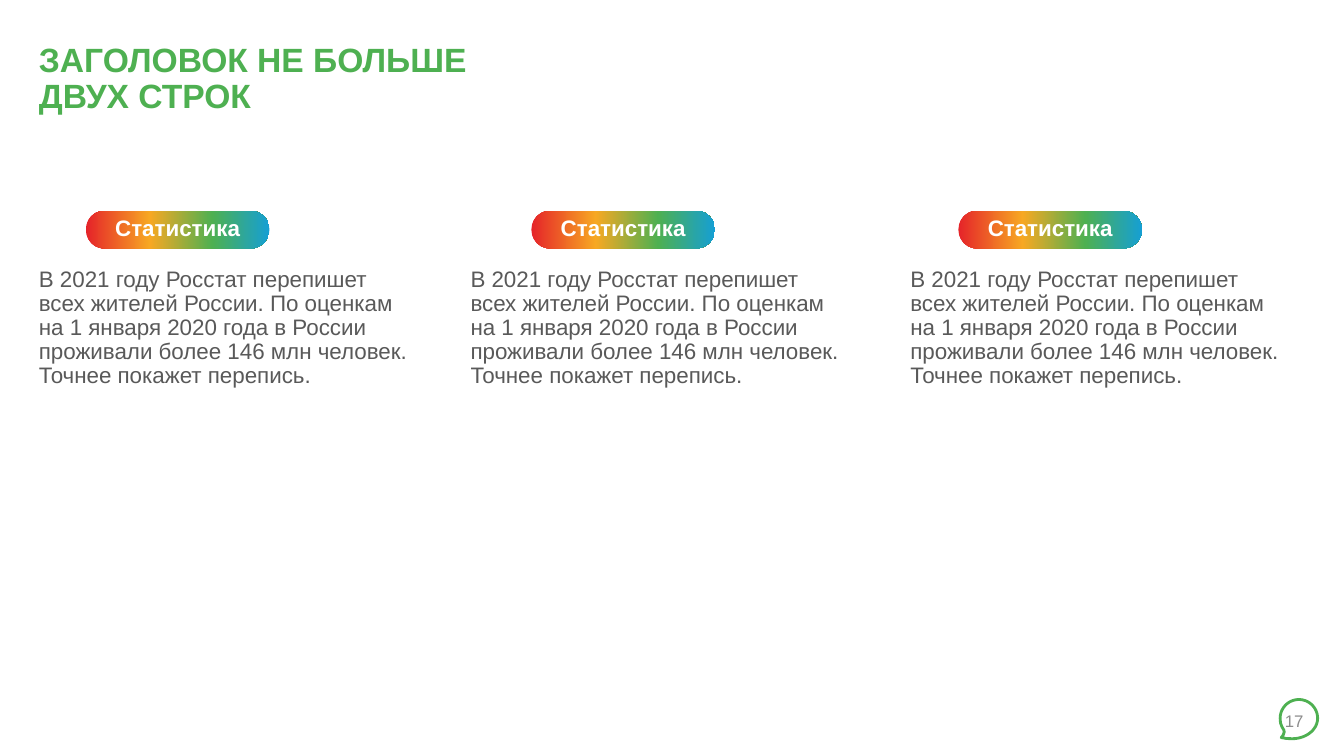
from copy import deepcopy
from dataclasses import dataclass
from math import cos, radians, sin

from pptx import Presentation
from pptx.dml.color import RGBColor
from pptx.enum.shapes import MSO_SHAPE
from pptx.enum.text import MSO_ANCHOR, PP_ALIGN
from pptx.util import Pt

PILL = MSO_SHAPE.ROUNDED_RECTANGLE
TOP, MIDDLE = MSO_ANCHOR.TOP, MSO_ANCHOR.MIDDLE
LEFT, CENTER, RIGHT = PP_ALIGN.LEFT, PP_ALIGN.CENTER, PP_ALIGN.RIGHT


@dataclass(frozen=True)
class Theme:
    font: str = "Arial"
    green: str = "4EB051"
    body: str = "595959"
    number: str = "8C8C8C"
    white: str = "FFFFFF"
    rainbow: tuple = ((0, "E52329"), (0.35, "F7A823"), (0.69, "4EB051"), (1, "159FD4"))
    title_size: int = 24
    body_size: int = 16
    number_size: int = 12
    line_spacing: float = 0.9


THEME = Theme()

TITLE = ("ЗАГОЛОВОК НЕ БОЛЬШЕ", "ДВУХ СТРОК")
HEADING = "Статистика"
STATISTICS = (
    "В 2021 году Росстат перепишет всех жителей России. "
    "По оценкам на 1 января 2020 года в России проживали более "
    "146 млн человек. Точнее покажет перепись."
)
PAGE_NUMBER = "17"

# Left edge of each column and the indent of its heading
COLUMNS = ((20.7, 40.6), (329, 50.6), (643.2, 41.4))
COLUMN_TOP, COLUMN_WIDTH, COLUMN_HEIGHT = 150.5, 279.4, 349.2
HEADING_WIDTH, HEADING_HEIGHT, BODY_OFFSET = 131.2, 27, 37.4


def write(frame, lines, size, color, bold=False, align=LEFT, anchor=TOP,
          spacing=THEME.line_spacing):
    frame.word_wrap = True
    frame.vertical_anchor = anchor
    paragraph = frame.paragraphs[0]
    paragraph.alignment = align
    paragraph.line_spacing = spacing
    for index, line in enumerate(lines):
        if index:
            paragraph.add_line_break()
        run = paragraph.add_run()
        run.text = line
        run.font.name = THEME.font
        run.font.size = Pt(size)
        run.font.bold = bold
        run.font.color.rgb = RGBColor.from_string(color)


def add_text(slide, box, lines, size, color, **style):
    area = slide.shapes.add_textbox(*map(Pt, box))
    write(area.text_frame, lines, size, color, **style)


def fill_rainbow(shape):
    """Extend the default two-stop gradient to the theme's colours."""
    fill = shape.fill
    fill.gradient()
    fill.gradient_angle = 0
    stop_list = fill._fill._gradFill.gsLst
    while len(stop_list) < len(THEME.rainbow):
        stop_list.append(deepcopy(stop_list[0]))
    for stop, (position, color) in zip(fill.gradient_stops, THEME.rainbow):
        stop.position = position
        stop.color.rgb = RGBColor.from_string(color)


def add_title(slide, box):
    add_text(slide, box, TITLE, THEME.title_size, THEME.green, bold=True, anchor=MIDDLE)


def add_heading(slide, box):
    heading = slide.shapes.add_shape(PILL, *map(Pt, box))
    heading.adjustments[0] = 0.5
    heading.shadow.inherit = False
    heading.line.fill.background()
    fill_rainbow(heading)
    frame = heading.text_frame
    frame.margin_top = frame.margin_bottom = 0
    write(frame, [HEADING], THEME.body_size, THEME.white, bold=True,
          align=CENTER, anchor=MIDDLE)


def add_column(slide, box, indent):
    left, top, width, height = box
    add_heading(slide, (left + indent, top, HEADING_WIDTH, HEADING_HEIGHT))
    add_text(slide, (left, top + BODY_OFFSET, width, height - BODY_OFFSET),
             [STATISTICS], THEME.body_size, THEME.body)


def arc(center, radii, start, end, step=6):
    return [(center[0] + radii[0] * cos(radians(angle)),
             center[1] + radii[1] * sin(radians(angle)))
            for angle in range(start, end + 1, step)]


def add_page_number(slide, box):
    """Speech bubble filling the box, with the number over it."""
    left, top, width, height = box
    radius = width / 2
    tail_x = 0.32 * width
    outline = arc((radius, radius), (radius, radius), 180, 360)
    outline += arc((tail_x, radius), (width - tail_x, height - radius), 0, 90)
    outline += [(0.17 * width, 0.995 * height), (0.03 * width, 0.97 * height),
                (0.08 * width, 0.91 * height), (0.11 * width, 0.83 * height),
                (0.1 * width, 0.78 * height), (0.05 * width, 0.7 * height),
                (0.01 * width, 0.6 * height)]
    points = [(Pt(left + x), Pt(top + y)) for x, y in outline]
    builder = slide.shapes.build_freeform(*points[0])
    builder.add_line_segments(points[1:], close=True)
    bubble = builder.convert_to_shape()
    bubble.shadow.inherit = False
    bubble.fill.background()
    bubble.line.color.rgb = RGBColor.from_string(THEME.green)
    bubble.line.width = Pt(2)
    add_text(slide, (left - 192.2, top + 0.7, 216, 28.8), [PAGE_NUMBER],
             THEME.number_size, THEME.number, align=RIGHT, anchor=MIDDLE, spacing=1.0)


def main():
    deck = Presentation()
    deck.slide_width, deck.slide_height = Pt(960), Pt(540)
    slide = deck.slides.add_slide(deck.slide_layouts[6])
    add_title(slide, (20.7, 16.2, 782.6, 81.4))
    for left, indent in COLUMNS:
        add_column(slide, (left, COLUMN_TOP, COLUMN_WIDTH, COLUMN_HEIGHT), indent)
    add_page_number(slide, (914.4, 499.7, 26.8, 28))
    deck.save("out.pptx")


if __name__ == "__main__":
    main()
